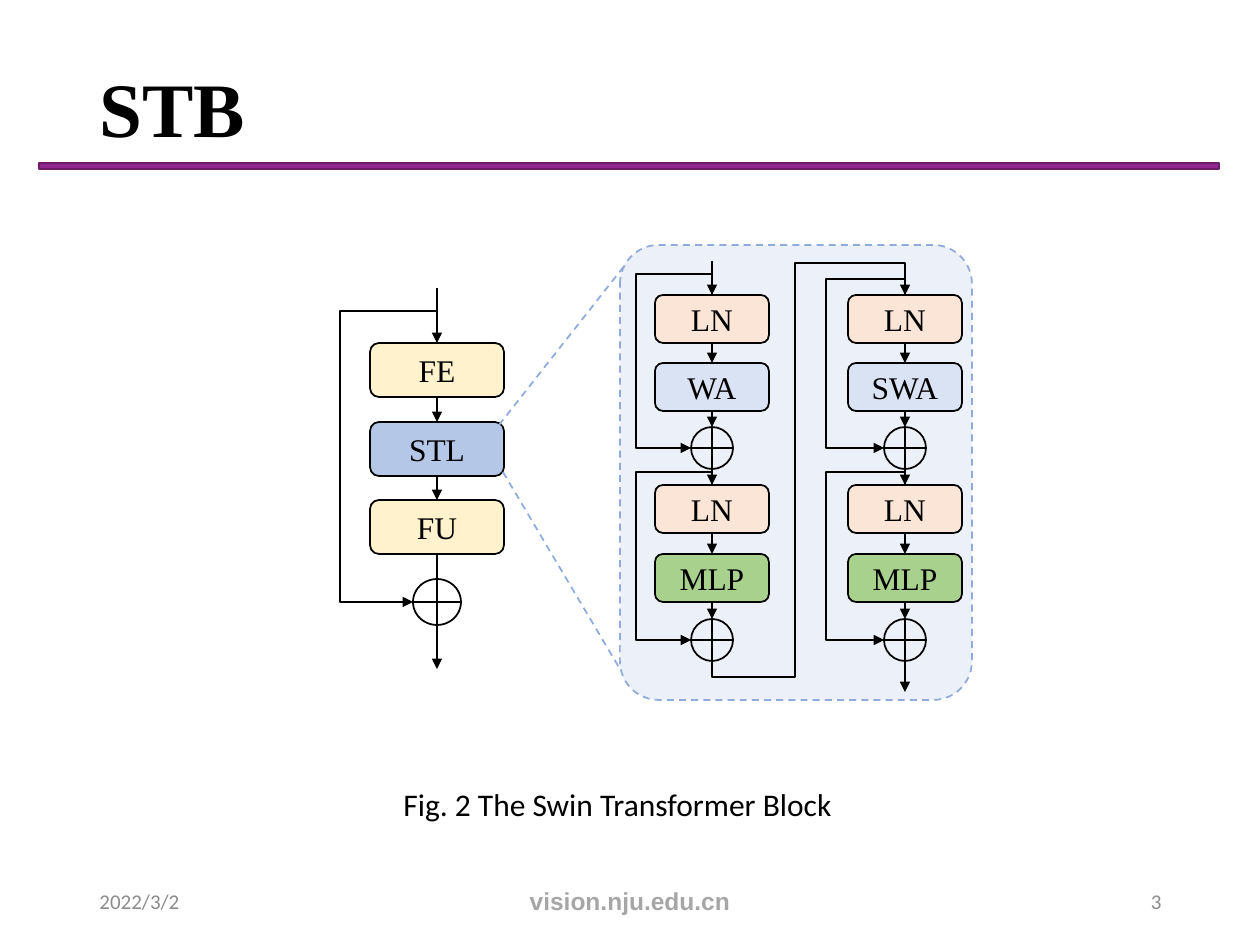
"""Build the STB slide: a block diagram beside its expanded transformer layer."""
from typing import NamedTuple

from lxml import etree
from pptx import Presentation
from pptx.dml.color import RGBColor
from pptx.enum.dml import MSO_LINE
from pptx.enum.shapes import MSO_CONNECTOR, MSO_SHAPE
from pptx.enum.text import MSO_ANCHOR, PP_ALIGN
from pptx.oxml.ns import qn
from pptx.util import Emu, Pt

STRAIGHT, ELBOW = MSO_CONNECTOR.STRAIGHT, MSO_CONNECTOR.ELBOW
RECT, ROUND = MSO_SHAPE.RECTANGLE, MSO_SHAPE.ROUNDED_RECTANGLE
SUM = MSO_SHAPE.FLOWCHART_OR
LEFT, CENTER, RIGHT = PP_ALIGN.LEFT, PP_ALIGN.CENTER, PP_ALIGN.RIGHT
TOP, MIDDLE = MSO_ANCHOR.TOP, MSO_ANCHOR.MIDDLE
DASH = MSO_LINE.DASH
SERIF, SANS, BODY = "Times New Roman", "Arial", "Calibri"
COLORS = {
    "black": "000000", "purple": "92278F", "plum": "6C1D6A",
    "cream": "FFF2CC", "blue": "B4C7E7", "pale": "DAE3F3",
    "peach": "FBE5D6", "green": "A9D18E", "dash": "8FAADC",
    "gray": "8C8C8C", "silver": "A6A6A6",
}


class Box(NamedTuple):
    x: int
    y: int
    w: int
    h: int


class Step(NamedTuple):
    text: str
    y: int
    color: str


class Loop(NamedTuple):
    start: int
    turn: int
    end: int


class Column(NamedTuple):
    cx: int
    side: int
    width: int
    height: int
    steps: tuple[Step, ...]
    sums: tuple[Box, ...]
    loops: tuple[Loop, ...]


class Label(NamedTuple):
    text: str
    box: Box
    size: int
    color: str
    font: str = BODY
    align: PP_ALIGN = LEFT
    anchor: MSO_ANCHOR = MIDDLE
    bold: bool = False
    wrap: bool = True


def layer_column(cx: int, side: int, attention: str, turn: int) -> Column:
    steps = (Step("LN", 295, "peach"), Step(attention, 363, "pale"),
             Step("LN", 485, "peach"), Step("MLP", 554, "green"))
    sums = tuple(Box(cx - 21, y, 42, 42) for y in (427, 619))
    loops = (Loop(295, turn, 448), Loop(485, 472, 640))
    return Column(cx, side, 114, 48, steps, sums, loops)


BLOCK = Column(437, 340, 134, 54,
               (Step("FE", 343, "cream"), Step("STL", 422, "blue"),
                Step("FU", 500, "cream")),
               (Box(413, 579, 48, 46),), (Loop(312, 311, 602),))
LAYERS = (layer_column(712, 636, "WA", 274), layer_column(905, 826, "SWA", 279))
LABELS = (
    Label("2022/3/2", Box(87, 876, 284, 50), 12, "gray"),
    Label("vision.nju.edu.cn", Box(417, 876, 426, 50), 14, "silver", SANS, CENTER, bold=True),
    Label("3", Box(890, 876, 284, 50), 12, "gray", align=RIGHT),
    Label("Fig. 2 The Swin Transformer Block", Box(391, 779, 459, 50), 18, "black",
          anchor=TOP, wrap=False),
)


def px(n: float) -> Emu:
    return Emu(round(n * 914400 / 126))


def rgb(name: str) -> RGBColor:
    return RGBColor.from_string(COLORS[name])


def write(tf, text: str, size: int, color: str, font: str, align: PP_ALIGN, bold: bool = False) -> None:
    tf.text = text
    p = tf.paragraphs[0]
    p.alignment = align
    f = p.runs[0].font
    f.size, f.name, f.bold = Pt(size), font, bold
    f.color.rgb = rgb(color)


def add_box(shapes, kind: MSO_SHAPE, box: Box, fill: str | None, line: str = "black", text: str = ""):
    sp = shapes.add_shape(kind, *map(px, box))
    sp.shadow.inherit = False
    if fill:
        sp.fill.solid()
        sp.fill.fore_color.rgb = rgb(fill)
    else:
        sp.fill.background()
    sp.line.color.rgb = rgb(line)
    sp.line.width = Pt(1)
    if text:
        sp.text_frame.word_wrap = False
        sp.text_frame.vertical_anchor = MIDDLE
        write(sp.text_frame, text, 18, "black", SERIF, CENTER)
    return sp


def add_line(shapes, x1: int, y1: int, x2: int, y2: int, color: str = "black",
             arrow: bool = True, kind: MSO_CONNECTOR = STRAIGHT):
    c = shapes.add_connector(kind, px(x1), px(y1), px(x2), px(y2))
    c.line.color.rgb = rgb(color)
    c.line.width = Pt(1)
    if arrow:
        etree.SubElement(c.line._get_or_add_ln(), qn("a:tailEnd"), type="triangle")
    etree.SubElement(c._element.spPr, qn("a:effectLst"))
    return c


def add_bent(shapes, x1: int, y1: int, x2: int, y2: int, turns: tuple[int, ...]) -> None:
    """Draw an elbow that leaves vertically; turns alternate between y and x."""
    c = add_line(shapes, x1, y1, x2, y2, kind=ELBOW)
    w, h = abs(y2 - y1), abs(x2 - x1)
    spPr = c._element.spPr
    xfrm = spPr.find(qn("a:xfrm"))
    for flip in ("flipH", "flipV"):
        xfrm.attrib.pop(flip, None)
    xfrm.set("rot", str((90 if y2 > y1 else 270) * 60000))
    c.left, c.top = px((x1 + x2 - w) / 2), px((y1 + y2 - h) / 2)
    c.width, c.height = px(w), px(h)
    geom = spPr.find(qn("a:prstGeom"))
    geom.set("prst", f"bentConnector{len(turns) + 2}")
    guides = geom.get_or_add_avLst()
    for i, turn in enumerate(turns):
        share = (turn - x1) / (x2 - x1) if i % 2 else (turn - y1) / (y2 - y1)
        etree.SubElement(guides, qn("a:gd"), name=f"adj{i + 1}", fmla=f"val {round(share * 100000)}")


def add_column(shapes, col: Column) -> None:
    nodes = [(s.y, add_box(shapes, ROUND, Box(col.cx - col.width // 2, s.y, col.width, col.height),
                           s.color, text=s.text), col.height, True) for s in col.steps]
    nodes += [(b.y, add_box(shapes, SUM, b, None), b.h, False) for b in col.sums]
    nodes.sort(key=lambda node: node[0])
    for (y, sp, h, is_box), (next_y, next_sp, _, next_is_box) in zip(nodes, nodes[1:]):
        c = add_line(shapes, col.cx, y + h, col.cx, next_y, arrow=col is not BLOCK or next_is_box)
        if is_box:
            c.begin_connect(sp, 2)
        if next_is_box:
            c.end_connect(next_sp, 0)
    for loop, b in zip(col.loops, col.sums):
        add_bent(shapes, col.cx, loop.start, b.x, loop.end, (loop.turn, col.side))


def add_label(shapes, label: Label) -> None:
    tf = shapes.add_textbox(*map(px, label.box)).text_frame
    tf.word_wrap = label.wrap
    tf.vertical_anchor = label.anchor
    write(tf, label.text, label.size, label.color, label.font, label.align, label.bold)


def main() -> None:
    prs = Presentation()
    prs.slide_width, prs.slide_height = px(1260), px(945)
    s = prs.slides.add_slide(prs.slide_layouts[5])
    shapes = s.shapes
    title = shapes.title
    title.left, title.top, title.width, title.height = map(px, Box(87, 50, 1086, 125))
    title.text_frame.vertical_anchor = MIDDLE
    write(title.text_frame, "STB", 44, "black", SERIF, LEFT, True)
    title.text_frame.paragraphs[0].line_spacing = 0.9
    add_box(shapes, RECT, Box(39, 163, 1180, 6), "purple", "plum")

    add_column(shapes, BLOCK)
    panel = add_box(shapes, ROUND, Box(620, 245, 352, 455), "pale", "dash")
    panel.adjustments[0] = 0.11
    panel.line.dash_style = DASH
    color = panel._element.spPr.find(qn("a:solidFill"))[0]
    etree.SubElement(color, qn("a:alpha"), val="50000")
    for col in LAYERS:
        add_column(shapes, col)
    first, last = LAYERS
    add_bent(shapes, first.cx, 661, last.cx, 295, (677, 795, 263))
    for cx, y1, y2 in ((BLOCK.cx, 288, 343), (BLOCK.cx, 625, 669),
                       (first.cx, 261, 295), (last.cx, 661, 692)):
        add_line(shapes, cx, y1, cx, y2)
    for ends in ((503, 472, 620, 669), (499, 425, 625, 265)):
        add_line(shapes, *ends, color="dash", arrow=False).line.dash_style = DASH
    for label in LABELS:
        add_label(shapes, label)
    prs.save("out.pptx")


if __name__ == "__main__":
    main()
